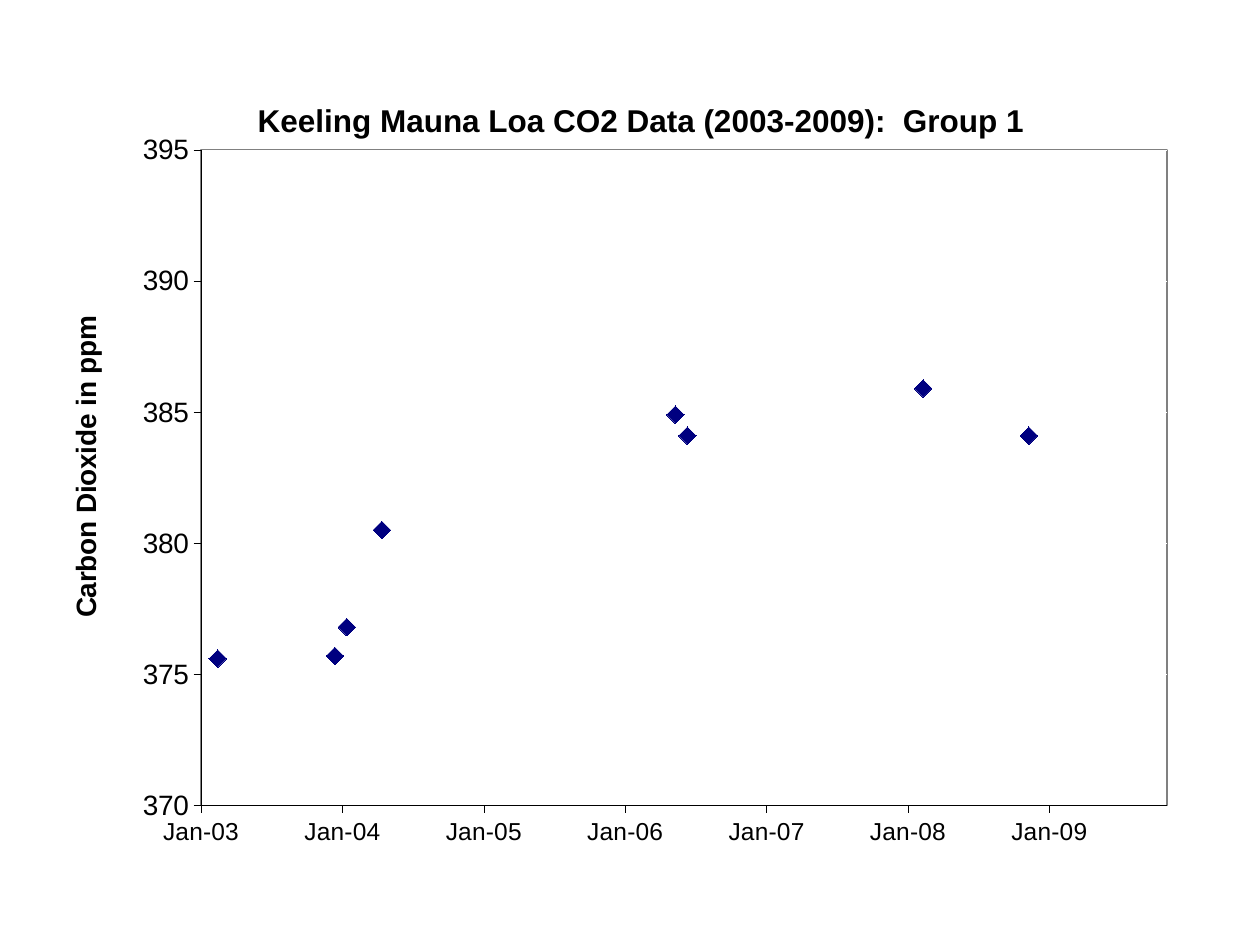
from typing import NamedTuple

from lxml import etree
from pptx import Presentation
from pptx import util as u
from pptx.chart.data import XyChartData
from pptx.dml.color import RGBColor
from pptx.enum import chart as ch
from pptx.oxml import parse_xml
from pptx.oxml.ns import nsdecls, qn

BLACK, WHITE, NAVY, GRAY = "000000", "FFFFFF", "000080", "808080"


class Reading(NamedTuple):
    day: int  # date serial number
    ppm: float


class Scale(NamedTuple):
    low: float
    high: float
    step: float
    form: str
    size: int


READINGS = [
    Reading(37667, 375.6), Reading(37970, 375.7),
    Reading(38001, 376.8), Reading(38092, 380.5),
    Reading(38852, 384.9), Reading(38883, 384.1),
    Reading(39493, 385.9), Reading(39767, 384.1),
]
DATES = Scale(37624, 40124, 366, r"[$-409]mmm\-yy;@", 14)
LEVELS = Scale(370, 395, 5, "0", 16)


def paint(item, color: str) -> None:
    """Give a fill or a font colour object a solid colour."""
    if hasattr(item, "solid"):
        item.solid()
        item = item.fore_color
    item.rgb = RGBColor.from_string(color)


def draw_line(line, color: str, width: float) -> None:
    paint(line.fill, color)
    line.width = u.Pt(width)


def set_all(item, values: dict) -> None:
    for name, value in values.items():
        setattr(item, name, value)


def set_font(font, size: int, bold: bool = False) -> None:
    set_all(font, {"name": "Arial", "size": u.Pt(size), "bold": bold})
    paint(font.color, BLACK)


def place(parent, index: int, **spots: float) -> None:
    """Put a manual layout, in fractions of the chart, into a chart part."""
    for old in parent.findall(qn("c:layout")):
        parent.remove(old)
    layout = parse_xml(f"<c:layout {nsdecls('c')}><c:manualLayout/></c:layout>")
    modes = {"xMode": "edge", "yMode": "edge"}
    if "w" in spots:
        modes = {"layoutTarget": "inner", **modes}
    for name, value in {**modes, **spots}.items():
        etree.SubElement(layout[0], qn(f"c:{name}")).set("val", str(value))
    parent.insert(index, layout)


def add_title(title, words: str, size: int, x: float, y: float) -> None:
    title.text_frame.text = words
    set_font(title.text_frame.paragraphs[0].runs[0].font, size, True)
    place(title._element, 1, x=x, y=y)


def format_axis(axis, scale: Scale) -> None:
    set_all(axis, {
        "minimum_scale": scale.low,
        "maximum_scale": scale.high,
        "major_unit": scale.step,
        "major_tick_mark": ch.XL_TICK_MARK.OUTSIDE,
        "minor_tick_mark": ch.XL_TICK_MARK.NONE,
        "crosses": ch.XL_AXIS_CROSSES.MINIMUM,
        "has_major_gridlines": False,
    })
    set_all(axis.tick_labels, {
        "number_format": scale.form,
        "number_format_is_linked": False,
    })
    set_font(axis.tick_labels.font, scale.size)
    draw_line(axis.format.line, BLACK, 0.25)


def format_plot(chart) -> None:
    area = chart._chartSpace.chart.plotArea
    place(area, 0, x=0.137, y=0.099, w=0.817, h=0.817)
    area.append(parse_xml(
        f'<c:spPr {nsdecls("c", "a")}>'
        f'<a:solidFill><a:srgbClr val="{WHITE}"/></a:solidFill>'
        f'<a:ln w="12700"><a:solidFill><a:srgbClr val="{GRAY}"/></a:solidFill>'
        "</a:ln></c:spPr>"))


def format_marks(series) -> None:
    series.format.line.fill.background()
    mark = series.marker
    set_all(mark, {"style": ch.XL_MARKER_STYLE.DIAMOND, "size": 10})
    paint(mark.format.fill, NAVY)
    draw_line(mark.format.line, NAVY, 0.75)


def main() -> None:
    deck = Presentation()
    set_all(deck, {"slide_width": u.Cm(25.4), "slide_height": u.Cm(19.05)})
    slide = deck.slides.add_slide(deck.slide_layouts[6])

    data = XyChartData()
    series = data.add_series("Series 1")
    for point in READINGS:
        series.add_data_point(point.day, point.ppm)
    chart = slide.shapes.add_chart(
        ch.XL_CHART_TYPE.XY_SCATTER, u.Cm(0.79), u.Cm(1.42),
        u.Cm(23.83), u.Cm(16.18), data).chart

    set_all(chart, {"has_legend": False, "has_title": True})
    set_font(chart.font, 10)
    add_title(chart.chart_title, "Keeling Mauna Loa CO2 Data (2003-2009):  Group 1",
              18, 0.18, 0.03)
    format_axis(chart.category_axis, DATES)
    levels = chart.value_axis
    format_axis(levels, LEVELS)
    levels.has_major_gridlines = True
    draw_line(levels.major_gridlines.format.line, WHITE, 0.25)
    add_title(levels.axis_title, "Carbon Dioxide in ppm", 16, 0.02, 0.3)
    format_plot(chart)

    plot = chart.plots[0]
    plot.vary_by_categories = False
    marks = plot.series[0]
    marks.smooth = False
    format_marks(marks)
    deck.save("out.pptx")


if __name__ == "__main__":
    main()
